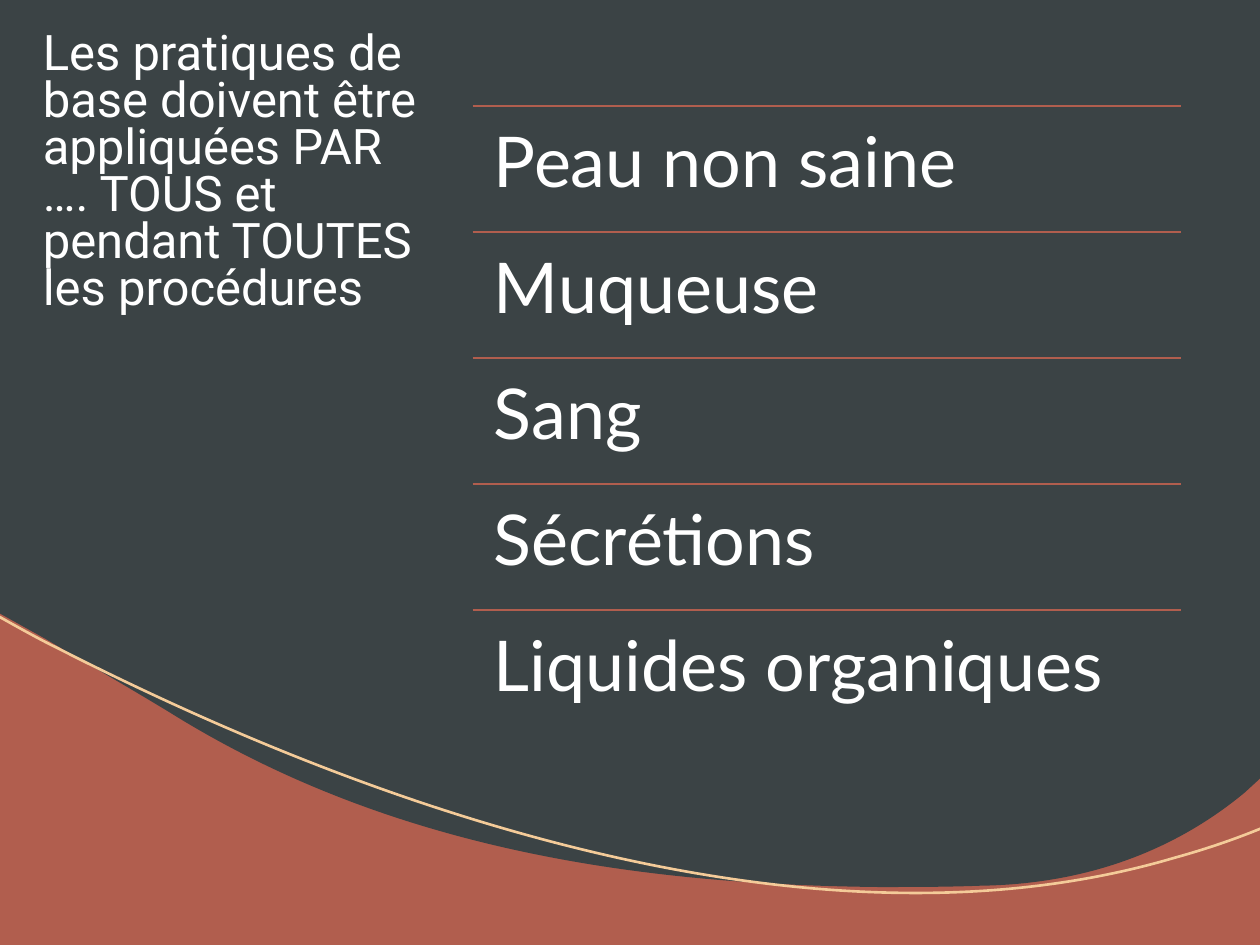
from math import cos, radians, sin

from lxml.etree import SubElement
from pptx import Presentation
from pptx.dml.color import RGBColor
from pptx.enum.shapes import MSO_CONNECTOR as Connector
from pptx.enum.text import MSO_ANCHOR as Anchor, MSO_AUTO_SIZE as AutoSize, PP_ALIGN as Align
from pptx.oxml.ns import qn
from pptx.util import Inches, Pt

COLORS = {"terracotta": "B15E4E", "slate": "3B4345", "sand": "F4CB99", "white": "FFFFFF"}
WIDTH, HEIGHT = 10, 7.5
LIST_LEFT, LIST_TOP, LIST_WIDTH, ROW_HEIGHT = 3.75, 0.84, 5.62, 1
TITLE = "Les pratiques de base doivent être appliquées PAR …. TOUS et pendant TOUTES les procédures"
ITEMS = ["Peau non saine", "Muqueuse", "Sang", "Sécrétions", "Liquides organiques"]
WAVE = [
    [(0, 0)],
    [(10.01, 0)],
    [(10.01, 6.17)],
    [(9.88, 6.29)],
    [(9.24, 6.82), (8.5, 7.02), (7.78, 7.03)],
    [(7.51, 7.04), (7.24, 7.04), (6.97, 7.04)],
    [(5.08, 7.02), (3.1, 6.75), (1.34, 5.65)],
    [(1.01, 5.45), (0.68, 5.26), (0.36, 5.07)],
    [(0, 4.87)],
]
RIBBON = [
    [(10.59, 5.5)],
    [(10.7, 6.25)],
    [(10.45, 6.38)],
    [(10.15, 6.53), (9.8, 6.68), (9.33, 6.81)],
    [(6.75, 7.57), (3.5, 6.69), (0.46, 5.14)],
    [(0.21, 5.02), (-0.35, 4.69), (-0.71, 4.49)],
]
RIBBON_CENTER, RIBBON_ANGLE = (5.14, 5.24), 230.3


def color(name):
    """Return a named colour."""
    return RGBColor.from_string(COLORS[name])


def turn_back(point, center, angle):
    """Return where a point lies before a clockwise turn about a center."""
    x, y = point[0] - center[0], point[1] - center[1]
    cosine, sine = cos(radians(angle)), sin(radians(angle))
    return center[0] + x * cosine + y * sine, center[1] - x * sine + y * cosine


def bend(shape, segments):
    """Merge each run of three straight segments that stands for a cubic curve."""
    lines = iter(list(shape.element.iter(qn("a:lnTo"))))
    for segment in segments:
        first, *others = [next(lines) for _ in segment]
        for other in others:
            first.append(other[0])
            other.getparent().remove(other)
        if others:
            first.tag = qn("a:cubicBezTo")


def add_outline(slide, segments, fill=None, line=None, center=(0, 0), angle=0):
    """Draw a filled area or an open line from straight and curved segments."""
    points = [turn_back(point, center, angle) for segment in segments for point in segment]
    points = [(Inches(x), Inches(y)) for x, y in points]
    builder = slide.shapes.build_freeform(*points[0], scale=1.0)
    builder.add_line_segments(points[1:], close=fill is not None)
    shape = builder.convert_to_shape()
    bend(shape, segments[1:])
    shape.rotation = angle
    shape.shadow.inherit = False
    if fill:
        shape.fill.solid()
        shape.fill.fore_color.rgb = color(fill)
    else:
        shape.fill.background()
    if line:
        shape.line.color.rgb = color(line)
        shape.line.width = Pt(1.5)
    else:
        shape.line.fill.background()


def write_text(shape, text, *, font, size, spacing, after=0, inset=None):
    """Write one left-aligned white paragraph at the top of a shape."""
    frame = shape.text_frame
    frame.text = text
    frame.word_wrap = True
    frame.auto_size = AutoSize.NONE
    frame.vertical_anchor = Anchor.TOP
    if inset is not None:
        frame.margin_left = frame.margin_right = Inches(inset)
        frame.margin_top = frame.margin_bottom = Inches(inset)
    paragraph = frame.paragraphs[0]
    paragraph.alignment = Align.LEFT
    paragraph.line_spacing = spacing
    paragraph.space_after = Pt(after)
    run_font = paragraph.runs[0].font
    run_font.name, run_font.size, run_font.color.rgb = font, Pt(size), color("white")


def add_title(slide):
    """Place the title in front of the wave."""
    title = slide.shapes.title
    title.left, title.top, title.width, title.height = map(Inches, (0.24, 0.21, 3.27, 2.5))
    write_text(title, TITLE, font="Roboto", size=28, spacing=0.8, after=6)
    title.element.getparent().append(title.element)


def add_row(group, index, text):
    """Add one list row with a rule along its top."""
    left, top, width, height = map(Inches, (LIST_LEFT, LIST_TOP + index * ROW_HEIGHT, LIST_WIDTH, ROW_HEIGHT))
    rule = group.shapes.add_connector(Connector.STRAIGHT, left, top, left + width, top)
    rule.line.color.rgb = color("terracotta")
    rule.line.width = Pt(1)
    SubElement(rule.element.spPr, qn("a:effectLst"))
    box = group.shapes.add_textbox(left, top, width, height)
    write_text(box, text, font="Lato", size=40, spacing=0.9, inset=0.17)


def main():
    """Build and save the slide."""
    presentation = Presentation()
    presentation.slide_width, presentation.slide_height = Inches(WIDTH), Inches(HEIGHT)
    slide = presentation.slides.add_slide(presentation.slide_layouts[5])
    slide.background.fill.solid()
    slide.background.fill.fore_color.rgb = color("terracotta")
    add_outline(slide, WAVE, fill="slate")
    add_outline(slide, RIBBON, line="sand", center=RIBBON_CENTER, angle=RIBBON_ANGLE)
    add_title(slide)
    group = slide.shapes.add_group_shape()
    for index, text in enumerate(ITEMS):
        add_row(group, index, text)
    presentation.save("out.pptx")


if __name__ == "__main__":
    main()
